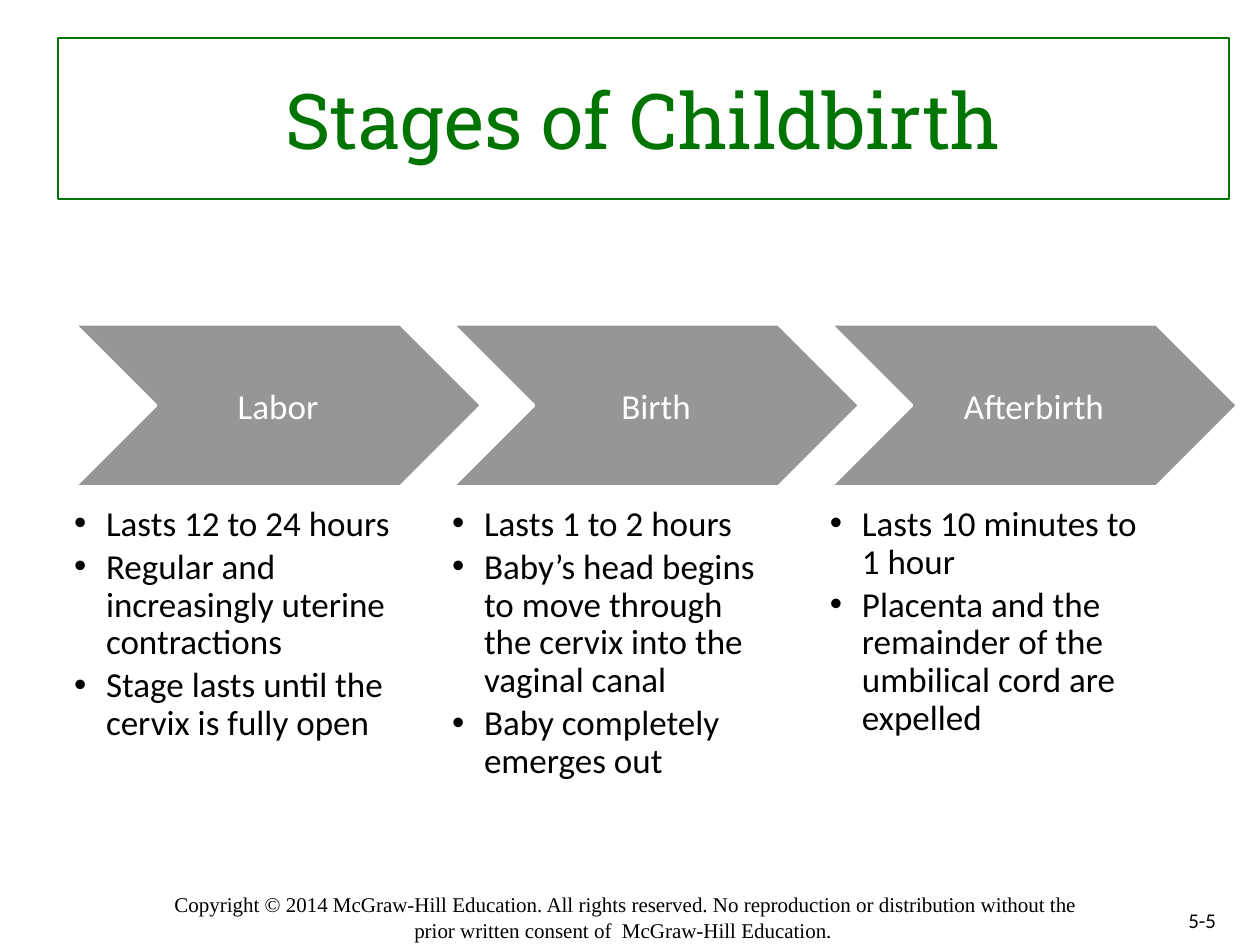
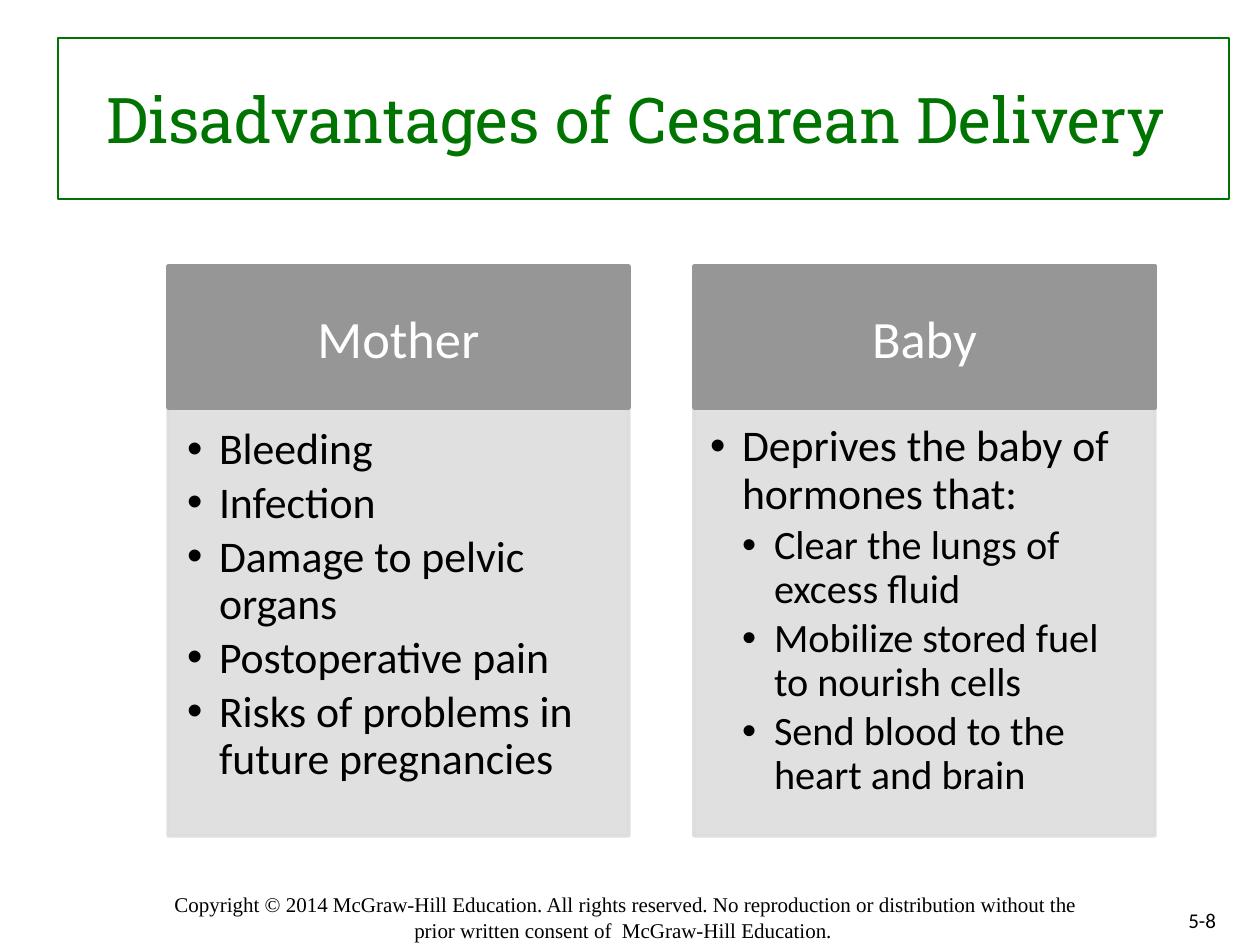
from lxml import etree
from pptx import Presentation
from pptx.dml.color import RGBColor
from pptx.enum.shapes import MSO_SHAPE
from pptx.enum.text import MSO_ANCHOR, MSO_AUTO_SIZE, PP_ALIGN
from pptx.oxml.ns import qn
from pptx.util import Emu, Pt

RECTANGLE, CHEVRON = MSO_SHAPE.RECTANGLE, MSO_SHAPE.CHEVRON
TOP, MIDDLE = MSO_ANCHOR.TOP, MSO_ANCHOR.MIDDLE
LEFT, CENTER, RIGHT = PP_ALIGN.LEFT, PP_ALIGN.CENTER, PP_ALIGN.RIGHT
NO_FIT = MSO_AUTO_SIZE.NONE

GREEN, GREY, PALE = "007400", "969696", "DDDDDD"
BLACK, WHITE = "000000", "FFFFFF"
BODY_FONT, TITLE_FONT, FOOTER_FONT = "Calibri", "Roboto Slab", "Times New Roman"
EMU_PER_PX = 914400 / 126
HANGING = 32
TWO_CONTENT = 3
COPYRIGHT = (
    "Copyright © 2014 McGraw-Hill Education. All rights reserved. "
    "No reproduction or distribution without the prior written consent of  "
    "McGraw-Hill Education. "
)


def px(length):
    return Emu(round(length * EMU_PER_PX))


def rgb(value):
    return RGBColor.from_string(value)


class Deck:
    """Holds the style of the presentation and the slide being built."""

    def __init__(self):
        self.prs = Presentation()
        self.prs.slide_width, self.prs.slide_height = px(1260), px(945)
        self.slide = None
        self.free_bodies = []

    def new_slide(self, title, title_size, number):
        layout = self.prs.slide_layouts[TWO_CONTENT]
        self.slide = self.prs.slides.add_slide(layout)
        heading, *self.free_bodies = self.slide.placeholders
        self.place(heading, (58, 38, 1171, 161))
        self.paint(heading, None, GREEN, 1.25)
        frame = self.frame(heading, MIDDLE, (13, 6, 13, 6))
        self.set_text(frame.paragraphs[0], title, title_size, GREEN, CENTER, TITLE_FONT)
        self.label(COPYRIGHT, (160, 892, 932, 50), CENTER, TOP, FOOTER_FONT)
        self.label(number, (935, 895, 294, 50), RIGHT, MIDDLE, BODY_FONT, (13, 6, 13, 6))

    def place(self, shape, box):
        shape.left, shape.top, shape.width, shape.height = map(px, box)

    def paint(self, shape, fill, line, width, opacity=None):
        if fill:
            shape.fill.solid()
            shape.fill.fore_color.rgb = rgb(fill)
        else:
            shape.fill.background()
        shape.line.color.rgb = rgb(line)
        shape.line.width = Pt(width)
        if opacity:
            for color in shape._element.spPr.iter(qn("a:srgbClr")):
                etree.SubElement(color, qn("a:alpha"), val=str(opacity * 1000))

    def frame(self, shape, anchor, insets):
        frame = shape.text_frame
        frame.word_wrap = True
        frame.auto_size = NO_FIT
        frame.vertical_anchor = anchor
        (frame.margin_left, frame.margin_top,
         frame.margin_right, frame.margin_bottom) = map(px, insets)
        return frame

    def set_text(self, paragraph, text, size, color, align, font=BODY_FONT):
        paragraph.text = text
        paragraph.alignment = align
        paragraph.font.name = font
        paragraph.font.size = Pt(size)
        paragraph.font.color.rgb = rgb(color)

    def label(self, text, box, align, anchor, font, insets=(0, 0, 0, 0)):
        textbox = self.slide.shapes.add_textbox(*map(px, box))
        frame = self.frame(textbox, anchor, insets)
        self.set_text(frame.paragraphs[0], text, 12, BLACK, align, font)

    def header(self, kind, text, box, size, line):
        shape = self.slide.shapes.add_shape(kind, *map(px, box))
        shape.shadow.inherit = False
        self.paint(shape, GREY, line, 2)
        frame = self.frame(shape, MIDDLE, (0, 0, 0, 0))
        self.set_text(frame.paragraphs[0], text, size, WHITE, CENTER)

    def bullet_list(self, items, box, sizes, insets=(0, 0, 0, 0), fill=None):
        """Items are (level, text); sizes hold one font size per level."""
        if self.free_bodies:
            body = self.free_bodies.pop(0)
            self.place(body, box)
        else:
            body = self.slide.shapes.add_textbox(*map(px, box))
        if fill:
            self.paint(body, fill, fill, 2, opacity=90)
        frame = self.frame(body, TOP, insets)
        for index, (level, text) in enumerate(items):
            paragraph = frame.add_paragraph() if index else frame.paragraphs[0]
            paragraph.level = level
            properties = paragraph._p.get_or_add_pPr()
            properties.set("marL", str(px(HANGING * (level + 1))))
            properties.set("indent", str(px(-HANGING)))
            etree.SubElement(properties, qn("a:buFont"), typeface="Arial")
            etree.SubElement(properties, qn("a:buChar"), char="•")
            self.set_text(paragraph, text, sizes[level], BLACK, LEFT)
            paragraph.line_spacing = 0.9
            paragraph.space_before = Pt(0)
            paragraph.space_after = Pt(sizes[level] * 0.15)


def build_stages(deck):
    stages = [
        ("Labor", [
            "Lasts 12 to 24 hours",
            "Regular and increasingly uterine contractions",
            "Stage lasts until the cervix is fully open",
        ]),
        ("Birth", [
            "Lasts 1 to 2 hours",
            "Baby’s head begins to move through the cervix into the vaginal canal",
            "Baby completely emerges out",
        ]),
        ("Afterbirth", [
            "Lasts 10 minutes to 1 hour",
            "Placenta and the remainder of the umbilical cord are expelled",
        ]),
    ]
    deck.new_slide("Stages of Childbirth", 44, "5-5")
    for column, (stage, facts) in enumerate(stages):
        left = 74 + 378 * column
        deck.header(CHEVRON, stage, (left, 324, 408, 163), 20, WHITE)
        deck.bullet_list([(0, fact) for fact in facts], (left, 506, 326, 282), [20])


def build_disadvantages(deck):
    patients = [
        ("Mother", (19, 19, 24, 28), [
            (0, "Bleeding"),
            (0, "Infection"),
            (0, "Damage to pelvic organs"),
            (0, "Postoperative pain"),
            (0, "Risks of problems in future pregnancies"),
        ]),
        ("Baby", (16, 16, 22, 25), [
            (0, "Deprives the baby of hormones that:"),
            (1, "Clear the lungs of excess fluid"),
            (1, "Mobilize stored fuel to nourish cells"),
            (1, "Send blood to the heart and brain"),
        ]),
    ]
    deck.new_slide("Disadvantages of Cesarean Delivery ", 36, "5-8")
    for column, (patient, insets, risks) in enumerate(patients):
        left = 168 + 526 * column
        deck.header(RECTANGLE, patient, (left, 266, 461, 142), 30, GREY)
        deck.bullet_list(risks, (left, 408, 461, 428), [25, 23], insets, PALE)


def main():
    deck = Deck()
    build_stages(deck)
    build_disadvantages(deck)
    deck.prs.save("out.pptx")


if __name__ == "__main__":
    main()
